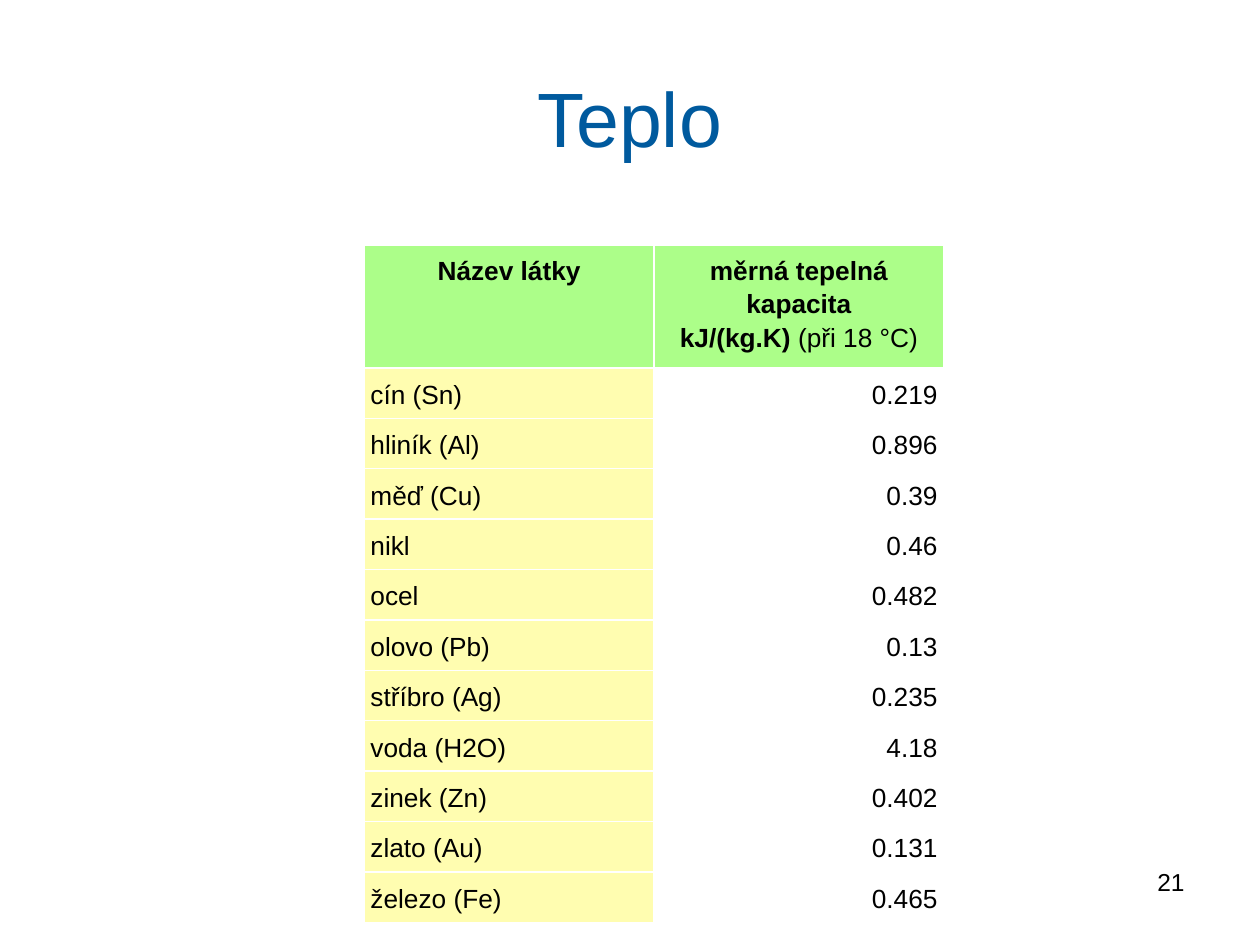
from dataclasses import dataclass

from pptx import Presentation
from pptx.dml.color import RGBColor
from pptx.enum.text import MSO_ANCHOR, PP_ALIGN
from pptx.util import Inches, Pt

LEFT, CENTER, RIGHT = PP_ALIGN.LEFT, PP_ALIGN.CENTER, PP_ALIGN.RIGHT
TOP, MIDDLE = MSO_ANCHOR.TOP, MSO_ANCHOR.MIDDLE


@dataclass(frozen=True)
class Theme:
    font: str = "Arial"
    text: RGBColor = RGBColor.from_string("000000")
    title: RGBColor = RGBColor.from_string("005A9E")
    header: RGBColor = RGBColor.from_string("ACFE89")
    substance: RGBColor = RGBColor.from_string("FFFDB0")
    capacity: RGBColor = RGBColor.from_string("FFFFFF")
    title_size: Pt = Pt(44)
    table_size: Pt = Pt(15)
    number_size: Pt = Pt(14)


theme = Theme()


def format_paragraph(paragraph, size, color, alignment):
    paragraph.alignment = alignment
    paragraph.font.name = theme.font
    paragraph.font.size = size
    paragraph.font.color.rgb = color


def format_cell(cell, fill, alignment, anchor):
    cell.fill.solid()
    cell.fill.fore_color.rgb = fill
    cell.vertical_anchor = anchor
    cell.margin_left = cell.margin_right = Inches(0.05)
    cell.margin_top = cell.margin_bottom = Inches(0.05)
    paragraph = cell.text_frame.paragraphs[0]
    paragraph.line_spacing = 1.15
    format_paragraph(paragraph, theme.table_size, theme.text, alignment)


capacities = [
    ("cín (Sn)", "0.219"),
    ("hliník (Al)", "0.896"),
    ("měď (Cu)", "0.39"),
    ("nikl", "0.46"),
    ("ocel", "0.482"),
    ("olovo (Pb)", "0.13"),
    ("stříbro (Ag)", "0.235"),
    ("voda (H2O)", "4.18"),
    ("zinek (Zn)", "0.402"),
    ("zlato (Au)", "0.131"),
    ("železo (Fe)", "0.465"),
]

presentation = Presentation()
presentation.slide_width = Inches(10)
presentation.slide_height = Inches(7.5)
slide = presentation.slides.add_slide(presentation.slide_layouts[5])

number_box = slide.shapes.add_textbox(Inches(7.17), Inches(6.83), Inches(2.33), Inches(0.52))
number_box.text_frame.word_wrap = True
number_box.text_frame.text = "21"
format_paragraph(number_box.text_frame.paragraphs[0], theme.number_size, theme.text, RIGHT)

table = slide.shapes.add_table(
    len(capacities) + 1, 2, Inches(2.89), Inches(1.95), Inches(4.6), Inches(5.4)
).table
table.horz_banding = False
for column in table.columns:
    column.width = Inches(2.3)
for row in table.rows:
    row.height = Inches(0.4)
table.rows[0].height = Inches(0.97)

header_runs = [
    [("Název látky", True)],
    [("měrná tepelná kapacita\vkJ/(kg.K) ", True), ("při 18 °C", False)],
]
header_runs[1][1] = ("(při 18 °C)", False)
for column_index, runs in enumerate(header_runs):
    cell = table.cell(0, column_index)
    format_cell(cell, theme.header, CENTER, TOP)
    paragraph = cell.text_frame.paragraphs[0]
    for text, bold in runs:
        for line_index, line in enumerate(text.split("\v")):
            if line_index:
                paragraph.add_line_break()
            run = paragraph.add_run()
            run.text = line
            run.font.bold = bold

column_styles = [(theme.substance, LEFT), (theme.capacity, RIGHT)]
for row_index, values in enumerate(capacities, start=1):
    for column_index, (value, (fill, alignment)) in enumerate(zip(values, column_styles)):
        cell = table.cell(row_index, column_index)
        cell.text = value
        format_cell(cell, fill, alignment, MIDDLE)

title = slide.shapes.title
title.left, title.top = Inches(0.5), Inches(0.3)
title.width, title.height = Inches(9), Inches(1.25)
title.text_frame.text = "Teplo"
title.text_frame.vertical_anchor = MIDDLE
format_paragraph(title.text_frame.paragraphs[0], theme.title_size, theme.title, CENTER)

presentation.save("out.pptx")
